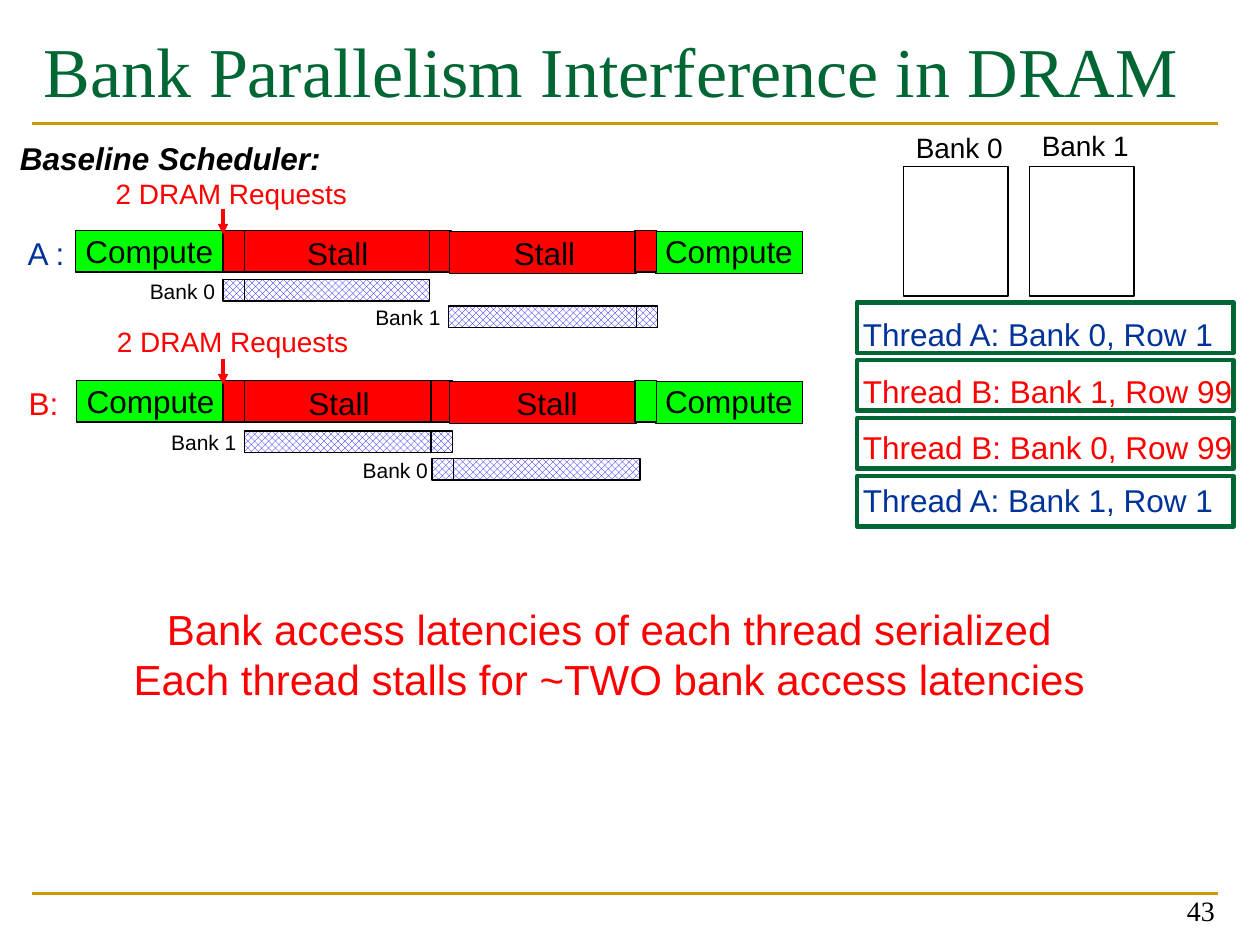
from pptx import Presentation
from pptx.dml.color import RGBColor
from pptx.enum.dml import MSO_PATTERN
from pptx.enum.shapes import MSO_CONNECTOR, MSO_SHAPE
from pptx.enum.text import MSO_ANCHOR, MSO_AUTO_SIZE, PP_ALIGN
from pptx.oxml.ns import qn
from pptx.util import Inches, Pt
from lxml.etree import SubElement

COLORS = {
    "black": "000000", "white": "FFFFFF", "red": "FF0000", "lime": "00FF00",
    "navy": "003399", "blue": "0000FF", "green": "006633", "gold": "CC9900",
}

TITLE = "Bank Parallelism Interference in DRAM"
PAGE_NUMBER = "43"
HEADING = "Baseline Scheduler:"
CONCLUSION = [
    "Bank access latencies of each thread serialized",
    "Each thread stalls for ~TWO bank access latencies",
]
RULES = [0.98, 7.09]
BANKS = [("Bank 0", 7.17, 0.99), ("Bank 1", 8.17, 0.97)]
REQUESTS = [
    ("Thread A: Bank 0, Row 1", "navy", 2.45, 3.05),
    ("Thread B: Bank 1, Row 99", "red", 2.9, 3.21),
    ("Thread B: Bank 0, Row 99", "red", 3.35, 3.21),
    ("Thread A: Bank 1, Row 1", "navy", 3.77, 3.05),
]
LONG, SHORT = 1.49, 0.17
THREADS = [
    {
        "name": "A :", "color": "navy", "name_at": (0.12, 0.51), "top": 1.83,
        "shift": 0, "stall_left": 3.98, "last_block": "red",
        "request_at": (0.82, 1.35),
        "accesses": [(1.92, 2.22, LONG), (1.77, 2.22, SHORT),
                     (3.56, 2.43, LONG), (5.05, 2.43, SHORT)],
        "banks": [("Bank 0", 1.09, 2.16), ("Bank 1", 2.88, 2.37)],
    },
    {
        "name": "B:", "color": "red", "name_at": (0.13, 0.44), "top": 3.02,
        "shift": 0.01, "stall_left": 4, "last_block": "lime",
        "request_at": (0.83, 2.53),
        "accesses": [(3.59, 3.64, LONG), (3.43, 3.64, SHORT),
                     (1.94, 3.42, LONG), (3.42, 3.42, SHORT)],
        "banks": [("Bank 1", 1.26, 3.36), ("Bank 0", 2.78, 3.58)],
    },
]


def color(name):
    return RGBColor.from_string(COLORS[name])


def write(shape, lines, size, ink, font="Arial", align=PP_ALIGN.LEFT,
          wrap=False, grow=True, anchor=MSO_ANCHOR.TOP, **style):
    frame = shape.text_frame
    frame.word_wrap = wrap
    frame.auto_size = MSO_AUTO_SIZE.SHAPE_TO_FIT_TEXT if grow else MSO_AUTO_SIZE.NONE
    frame.vertical_anchor = anchor
    for index, line in enumerate(lines):
        para = frame.add_paragraph() if index else frame.paragraphs[0]
        para.alignment = align
        span = para.add_run()
        span.text = line
        span.font.color.rgb = color(ink)
        for key, value in {"name": font, "size": Pt(size), **style}.items():
            setattr(span.font, key, value)


def add_text(page, at, text, size, ink="black", **options):
    box = page.shapes.add_textbox(*map(Inches, at))
    write(box, [text], size, ink, **options)


def add_box(page, at, fill=None, line="black", weight=0.75):
    box = page.shapes.add_shape(MSO_SHAPE.RECTANGLE, *map(Inches, at))
    box.shadow.inherit = False
    if fill:
        box.fill.solid()
        box.fill.fore_color.rgb = color(fill)
    else:
        box.fill.background()
    if line:
        box.line.color.rgb = color(line)
        box.line.width = Pt(weight)
    else:
        box.line.fill.background()
    return box


def add_access(page, at):
    fill = add_box(page, at).fill
    fill.patterned()
    fill.pattern = MSO_PATTERN.LARGE_CHECKER_BOARD
    fill.fore_color.rgb = color("blue")
    fill.back_color.rgb = color("white")


def add_line(page, ends, ink, weight, arrow=False):
    line = page.shapes.add_connector(MSO_CONNECTOR.STRAIGHT, *map(Inches, ends))
    line.line.color.rgb = color(ink)
    line.line.width = Pt(weight)
    if arrow:
        SubElement(line.line._get_or_add_ln(), qn("a:tailEnd"), type="triangle")
    SubElement(line._element.spPr, qn("a:effectLst"))


def add_thread(page, thread):
    top, shift = thread["top"], thread["shift"]
    blocks = [
        (5.2, 0.01, 1.17, "lime"), (0.6 + shift, 0, 1.17, "lime"),
        (1.93 + shift, 0, 1.48, "red"), (1.77, 0, SHORT, "red"),
        (3.41 + shift, 0, SHORT, "red"), (3.57, 0.01, 1.48, "red"),
        (5.04, 0, SHORT, thread["last_block"]),
    ]
    for left, drop, width, fill in blocks:
        add_box(page, (left, top + drop, width, 0.33), fill)
    for left in (0.58 + shift, 5.18):
        add_text(page, (left, top - 0.04, 1.24, 0.41), "Compute", 18)
    for left in (2.34 + shift, thread["stall_left"]):
        add_text(page, (left, top - 0.02, 0.7, 0.41), "Stall", 18)
    name_left, name_width = thread["name_at"]
    add_text(page, (name_left, top - 0.02, name_width, 0.41),
             thread["name"], 18, thread["color"])
    add_text(page, (*thread["request_at"], 2.08, 0.37), "2 DRAM Requests", 16, "red")
    add_line(page, (1.77, top - 0.17, 1.77, top + 0.03), "red", 1.75, arrow=True)
    for left, access_top, width in thread["accesses"]:
        add_access(page, (left, access_top, width, 0.17))
    for label, left, label_top in thread["banks"]:
        add_text(page, (left, label_top, 0.72, 0.3), label, 12)


def main():
    deck = Presentation()
    deck.slide_width, deck.slide_height = Inches(10), Inches(7.5)
    page = deck.slides.add_slide(deck.slide_layouts[6])

    for height in RULES:
        add_line(page, (0.25, height, 9.67, height), "gold", 1.5)
    add_text(page, (0.25, 0.17, 9.42, 1.17), TITLE, 40, "green",
             font="Times New Roman", wrap=True, grow=False)
    add_text(page, (7.41, 6.91, 2.33, 0.5), PAGE_NUMBER, 16, font="Times New Roman",
             wrap=True, grow=False, align=PP_ALIGN.RIGHT, anchor=MSO_ANCHOR.BOTTOM)
    add_text(page, (0.06, 1.05, 2.72, 0.41), HEADING, 18, wrap=True,
             bold=True, italic=True)

    for label, left, top in BANKS:
        add_box(page, (left, 1.32, 0.83, 1.03))
        add_text(page, (left, top, 0.9, 0.37), label, 16)
    for index, (label, ink, top, width) in enumerate(REQUESTS):
        add_text(page, (6.75, top, width, 0.41), label, 18, ink)
        add_box(page, (6.8, 2.4 + 0.46 * index, 2.99, 0.4), line="green", weight=2.5)

    for thread in THREADS:
        add_thread(page, thread)

    conclusion = add_box(page, (0.92, 4.74, 7.83, 0.91), "white", line=None)
    write(conclusion, CONCLUSION, 24, "red", align=PP_ALIGN.CENTER)
    deck.save("out.pptx")


if __name__ == "__main__":
    main()
